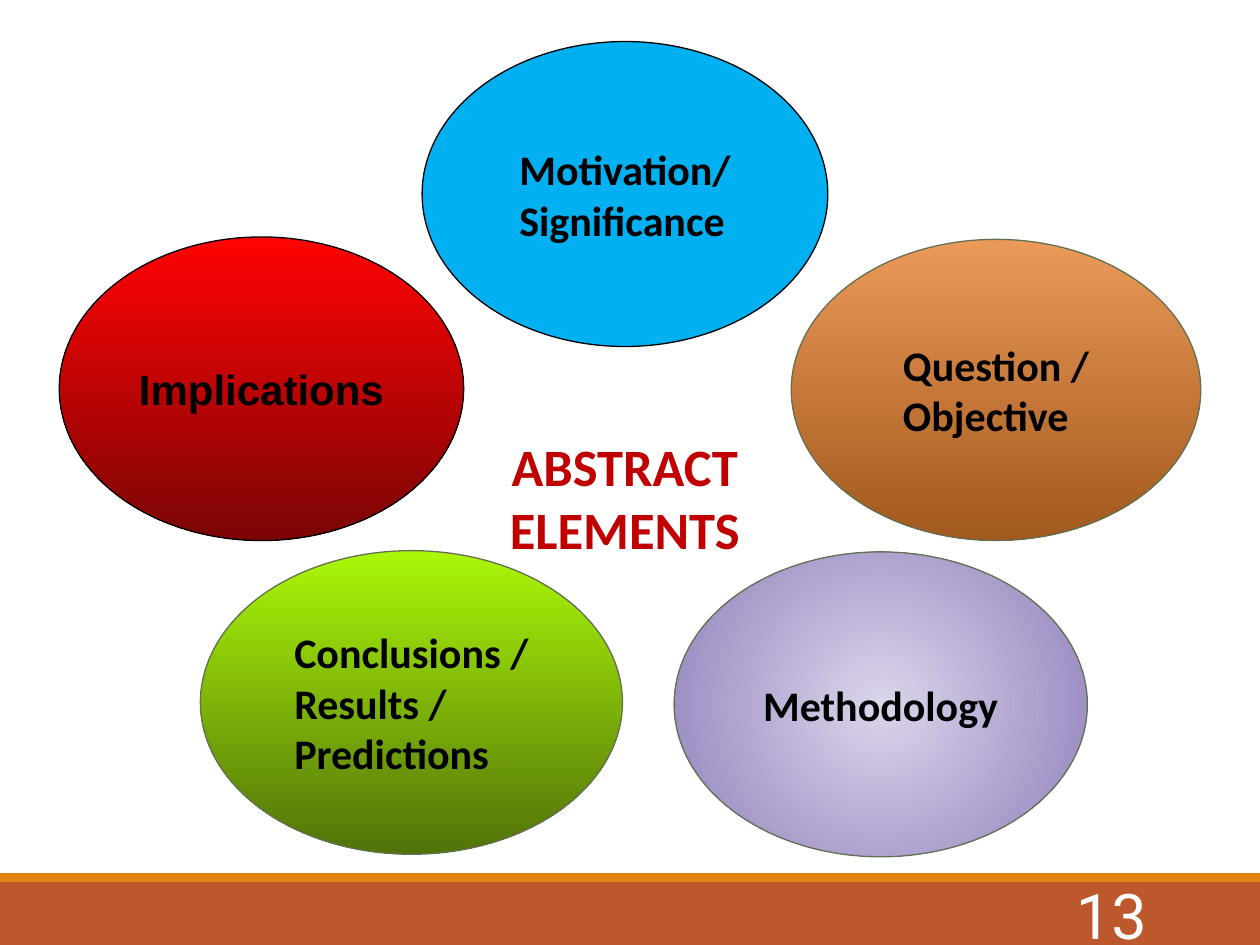
from dataclasses import dataclass
from typing import Any

import pptx
import pptx.dml.color
import pptx.enum.shapes
import pptx.enum.text
import pptx.oxml
import pptx.oxml.ns
import pptx.util

RGB = pptx.dml.color.RGBColor
ALIGN = pptx.enum.text.PP_ALIGN
PRESET = pptx.enum.shapes.MSO_SHAPE

BLACK = RGB(0x00, 0x00, 0x00)
WHITE = RGB(0xFF, 0xFF, 0xFF)
OLIVE = RGB(0x63, 0x70, 0x52)
RUST = RGB(0xBD, 0x58, 0x2C)
ORANGE = RGB(0xE4, 0x83, 0x12)
CRIMSON = RGB(0xC0, 0x00, 0x00)
SKY = RGB(0x00, 0xB0, 0xF0)
RED, DARK_RED = RGB(0xFF, 0x03, 0x03), RGB(0x7B, 0x05, 0x05)
TAN, BROWN = RGB(0xEA, 0x99, 0x58), RGB(0xA2, 0x59, 0x1D)
LILAC, PURPLE = RGB(0xDB, 0xD4, 0xEB), RGB(0x91, 0x80, 0xBB)
LIME, GREEN = RGB(0xAB, 0xF6, 0x08), RGB(0x51, 0x73, 0x09)

WIDTH = pptx.util.Inches(10)
HEIGHT = pptx.util.Inches(7.5)

Box = tuple[float, float, float, float]  # left, top, width, height in % of the slide


@dataclass(frozen=True)
class Element:
    label: str
    box: Box
    colors: tuple[RGB, ...]
    outline: RGB = OLIVE
    font: str = "Calibri"
    radial: bool = False


ELEMENTS = [
    Element("Motivation/\nSignificance", (33.5, 4.4, 32.2, 32.27), (SKY,), BLACK),
    Element("Implications", (4.7, 25.07, 32.1, 32.13), (RED, DARK_RED), BLACK, "Arial"),
    Element("Question / Objective", (62.8, 25.33, 32.5, 31.87), (TAN, BROWN)),
    Element("Methodology", (53.5, 58.4, 32.8, 32.27), (LILAC, PURPLE), radial=True),
    Element("Conclusions / Results / Predictions", (15.9, 58.27, 33.5, 32.13),
            (LIME, GREEN)),
]


def place(box: Box) -> tuple[int, int, int, int]:
    """Turn shares of the slide into lengths."""
    return tuple(round(share * side / 100)
                 for share, side in zip(box, (WIDTH, HEIGHT) * 2))


def write(shape: Any, text: str, *, size: float, color: RGB, font: str = "Calibri",
          bold: bool = False, align: Any = ALIGN.LEFT, centre_block: bool = False,
          margin: float = 0.05) -> None:
    """Set the text; centre_block centres the lines as a whole, keeping their alignment."""
    frame = shape.text_frame
    frame.text = text
    frame.word_wrap = True
    frame.auto_size = pptx.enum.text.MSO_AUTO_SIZE.NONE
    frame.vertical_anchor = pptx.enum.text.MSO_ANCHOR.MIDDLE
    frame.margin_left = frame.margin_right = pptx.util.Inches(0.1)
    frame.margin_top = frame.margin_bottom = pptx.util.Inches(margin)
    if centre_block:
        body = shape.element.find(".//" + pptx.oxml.ns.qn("a:bodyPr"))
        body.set("anchorCtr", "1")
    for paragraph in frame.paragraphs:
        paragraph.alignment = align
        paragraph.space_before = pptx.util.Pt(0)
        for run in paragraph.runs:
            run.font.name = font
            run.font.size = pptx.util.Pt(size)
            run.font.bold = bold
            run.font.color.rgb = color


def paint(shape: Any, colors: tuple[RGB, ...], radial: bool = False) -> None:
    """Fill with one colour, or with a downward or radial gradient."""
    fill = shape.fill
    if len(colors) == 1:
        fill.solid()
        fill.fore_color.rgb = colors[0]
        return
    fill.gradient()
    fill.gradient_angle = 270
    for stop, color in zip(fill.gradient_stops, colors):
        stop.color.rgb = color
    if radial:
        linear = shape.element.spPr.find(".//" + pptx.oxml.ns.qn("a:lin"))
        circle = pptx.oxml.parse_xml(
            f'<a:path {pptx.oxml.ns.nsdecls("a")} path="circle">'
            '<a:fillToRect l="50000" t="50000" r="50000" b="50000"/></a:path>')
        linear.getparent().replace(linear, circle)


def add_bar(slide: Any, box: Box, color: RGB) -> None:
    bar = slide.shapes.add_shape(PRESET.RECTANGLE, *place(box))
    bar.shadow.inherit = False
    paint(bar, (color,))
    bar.line.fill.background()


def add_element(slide: Any, element: Element) -> None:
    ellipse = slide.shapes.add_shape(PRESET.OVAL, *place(element.box))
    ellipse.shadow.inherit = False
    paint(ellipse, element.colors, element.radial)
    ellipse.line.color.rgb = element.outline
    ellipse.line.width = pptx.util.Pt(0.75)
    write(ellipse, element.label, size=24, color=BLACK, font=element.font,
          bold=True, centre_block=True, margin=0.1)


def main() -> None:
    deck = pptx.Presentation()
    deck.slide_width, deck.slide_height = WIDTH, HEIGHT
    slide = deck.slides.add_slide(deck.slide_layouts[5])

    add_bar(slide, (0, 93.33, 100, 6.67), RUST)
    add_bar(slide, (0, 92.4, 100, 0.93), ORANGE)

    title = slide.shapes.title
    title.left, title.top, title.width, title.height = place((35.3, 39.3, 28.6, 26.6))
    write(title, "ABSTRACT\nELEMENTS", size=30, color=CRIMSON, bold=True,
          align=ALIGN.CENTER)

    page_number = slide.shapes.add_textbox(*place((81.2, 94.13, 10.8, 5.33)))
    write(page_number, "13", size=36, color=WHITE, font="Roboto", align=ALIGN.RIGHT)

    for element in ELEMENTS:
        add_element(slide, element)

    deck.save("out.pptx")


if __name__ == "__main__":
    main()
